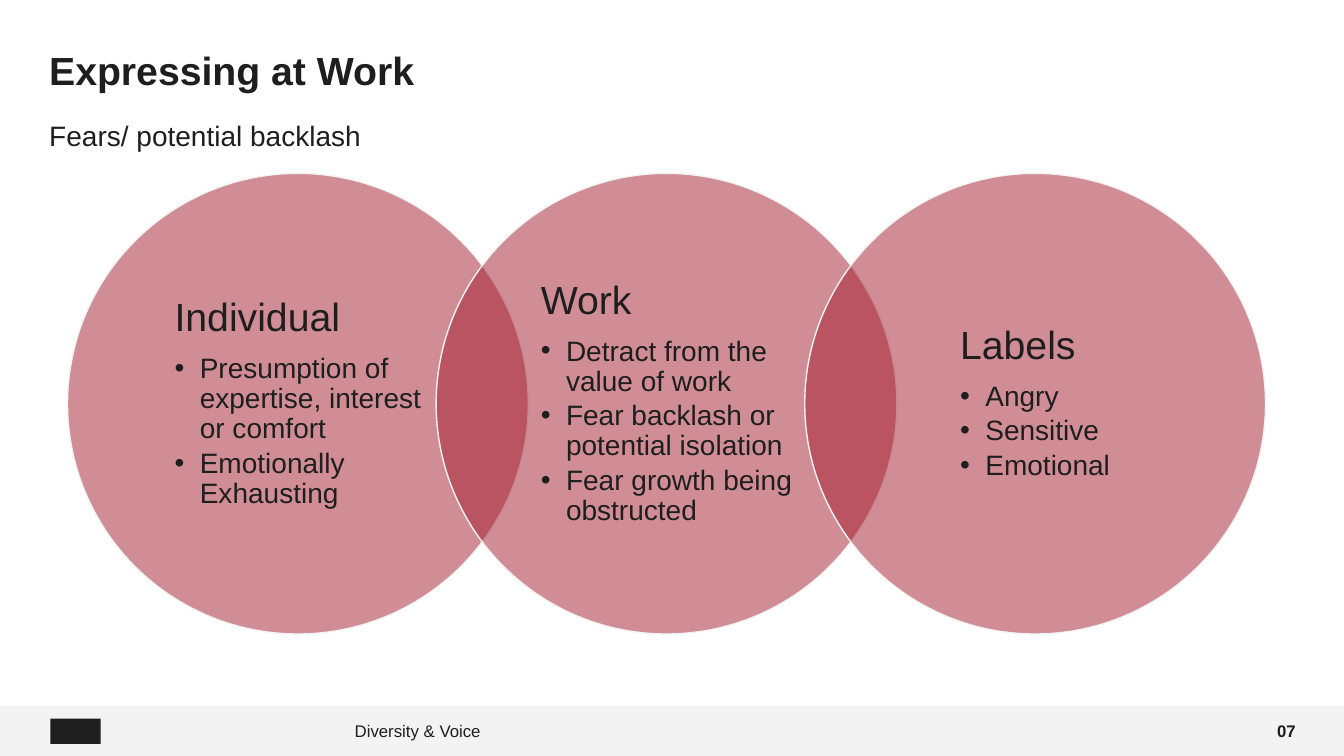
from pptx import Presentation
from pptx.dml.color import RGBColor
from pptx.enum.shapes import MSO_SHAPE as Shape
from pptx.enum.text import MSO_ANCHOR as Anchor, PP_ALIGN as Align
from pptx.oxml.ns import qn
from pptx.util import Inches, Pt
from lxml import etree

# Content
TITLE = "Expressing at Work"
SUBTITLE = "Fears/ potential backlash"
CIRCLES = [
    ("Individual", ["Presumption of expertise, interest or comfort",
                    "Emotionally Exhausting"]),
    ("Work", ["Detract from the value of work",
              "Fear backlash or potential isolation",
              "Fear growth being obstructed"]),
    ("Labels", ["Angry", "Sensitive", "Emotional"]),
]
FOOTER = "Diversity & Voice"
PAGE = "07"

# Format
FONT = "Arial"
INK = RGBColor(0x1E, 0x1E, 0x1E)
PALE = RGBColor(0xF3, 0xF3, 0xF3)
CRIMSON = RGBColor(0xA4, 0x1C, 0x2F)
WIDTH, HEIGHT = 13.33, 7.5
DIAMETER, OVERLAP = 4.57, 0.2
FIRST_LEFT, CIRCLE_TOP = 0.67, 1.72
INSET = 0.67
DEFAULT_MARGINS = (0.1, 0.05, 0.1, 0.05)

prs = Presentation()
prs.slide_width, prs.slide_height = Inches(WIDTH), Inches(HEIGHT)
slide = prs.slides.add_slide(prs.slide_layouts[6])


def add_box(left, top, width, height, margins=DEFAULT_MARGINS, anchor=Anchor.MIDDLE):
    box = slide.shapes.add_textbox(*map(Inches, (left, top, width, height)))
    frame = box.text_frame
    frame.word_wrap = True
    frame.vertical_anchor = anchor
    for side, margin in zip(("left", "top", "right", "bottom"), margins):
        setattr(frame, f"margin_{side}", Inches(margin))
    return frame


def add_solid(kind, left, top, width, height, color):
    solid = slide.shapes.add_shape(kind, *map(Inches, (left, top, width, height)))
    solid.shadow.inherit = False
    solid.fill.solid()
    solid.fill.fore_color.rgb = color
    solid.line.fill.background()
    return solid


def write(paragraph, text, size, bold=False, **layout):
    run = paragraph.add_run()
    run.text = text
    for name, value in {"name": FONT, "size": Pt(size), "bold": bold}.items():
        setattr(run.font, name, value)
    run.font.color.rgb = INK
    for name, value in layout.items():
        setattr(paragraph, name, value)


def add_bullet(paragraph):
    properties = paragraph._p.get_or_add_pPr()
    properties.set("marL", str(Inches(0.25)))
    properties.set("indent", str(-Inches(0.25)))
    etree.SubElement(properties, qn("a:buFont")).set("typeface", FONT)
    etree.SubElement(properties, qn("a:buChar")).set("char", "•")


# Footer band with a plain block at its left
add_solid(Shape.RECTANGLE, 0, 7, WIDTH, 0.5, PALE)
add_solid(Shape.RECTANGLE, 0.5, 7.13, 0.5, 0.25, INK)

# Headings
title = add_box(0.39, 0.28, 12.47, 0.66)
write(title.paragraphs[0], TITLE, 28, bold=True, line_spacing=Pt(45))
subtitle = add_box(0.39, 1.21, 12.44, 0.79, margins=(0.1, 0, 0, 0),
                   anchor=Anchor.TOP)
write(subtitle.paragraphs[0], SUBTITLE, 20, line_spacing=0.9)

# Overlapping circles, each with its text block centred inside
for index, (heading, points) in enumerate(CIRCLES):
    left = FIRST_LEFT + index * DIAMETER * (1 - OVERLAP)
    circle = add_solid(Shape.OVAL, left, CIRCLE_TOP, DIAMETER, DIAMETER, CRIMSON)
    circle.line.color.rgb = PALE
    circle.line.width = Pt(1)
    tint = circle.fill._xPr.find(qn("a:solidFill"))[0]
    etree.SubElement(tint, qn("a:alpha")).set("val", "50000")

    side = DIAMETER - 2 * INSET
    block = add_box(left + INSET, CIRCLE_TOP + INSET, side, side,
                    margins=(0.25, 0.04, 0.25, 0.04))
    block._txBody.bodyPr.set("anchorCtr", "1")
    write(block.paragraphs[0], heading, 28, line_spacing=0.9, space_after=Pt(9.8))
    for point in points:
        item = block.add_paragraph()
        add_bullet(item)
        write(item, point, 20, level=1, line_spacing=0.9, space_after=Pt(3))

# Footer text and page number
footer = add_box(3.42, 7.05, 8.8, 0.4)
write(footer.paragraphs[0], FOOTER, 12)
page = add_box(12.22, 7.05, 0.73, 0.4)
write(page.paragraphs[0], PAGE, 12, bold=True, alignment=Align.RIGHT)

prs.save("out.pptx")
